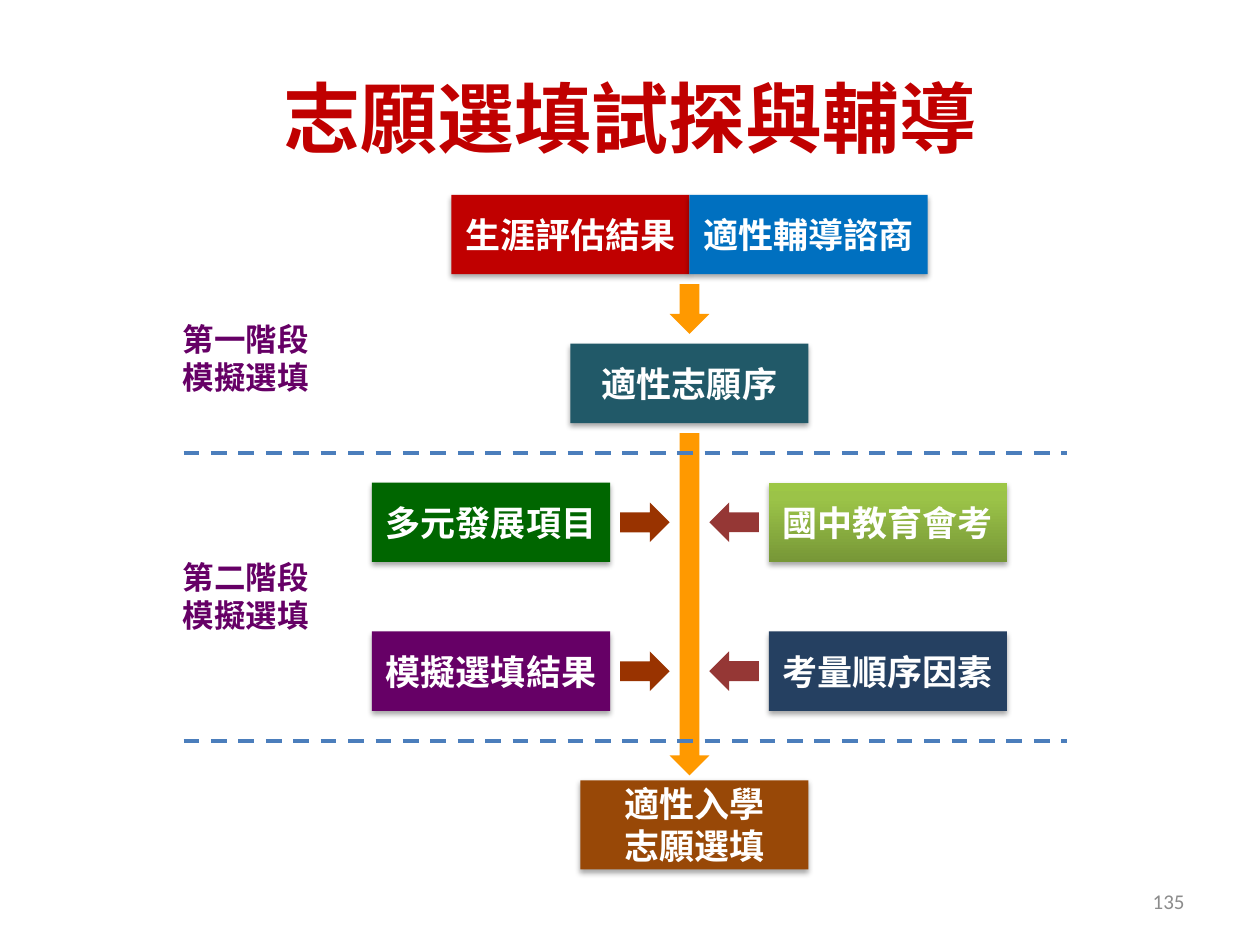
from copy import deepcopy

from lxml.etree import SubElement
from pptx import Presentation
from pptx.dml.color import RGBColor
from pptx.enum.dml import MSO_LINE
from pptx.enum.shapes import MSO_CONNECTOR, MSO_SHAPE
from pptx.enum.text import MSO_ANCHOR, PP_ALIGN
from pptx.oxml.ns import qn
from pptx.util import Cm, Pt

COLORS = {
    "red": "C00000", "blue": "0070C0", "teal": "215968", "green": "006600",
    "purple": "660066", "navy": "254061", "brown": "984807", "orange": "FF9900",
    "rust": "993300", "maroon": "953735", "dash": "4B7EBC", "gray": "8C8C8C",
    "white": "FFFFFF",
}
LIME_STOPS = [(0, "779737"), (0.8, "9BC348"), (1, "9DC746")]
CJK = "Noto Sans CJK SC"
BOX_W, BOX_H = 4.8, 1.6
ARROW_W, ARROW_H = 0.8, 1.0
AXIS = 13.9  # centre of the vertical flow


def rgb(name):
    return RGBColor.from_string(COLORS[name])


def write_text(tf, text, size=20, color="white", font=CJK, bold=True,
               align=PP_ALIGN.CENTER, anchor=MSO_ANCHOR.MIDDLE, wrap=True):
    tf.word_wrap = wrap
    tf.vertical_anchor = anchor
    for i, line in enumerate(text.split("\n")):
        p = tf.add_paragraph() if i else tf.paragraphs[0]
        p.alignment = align
        r = p.add_run()
        r.text = line
        r.font.size, r.font.bold, r.font.name = Pt(size), bold, font
        r.font.color.rgb = rgb(color)
        SubElement(r.font._element, qn("a:ea"), typeface=font)


class FlowSlide:
    def __init__(self, prs):
        self.s = prs.slides.add_slide(prs.slide_layouts[6])

    def text(self, x, y, w, h, text, **fmt):
        sp = self.s.shapes.add_textbox(Cm(x), Cm(y), Cm(w), Cm(h))
        write_text(sp.text_frame, text, **fmt)

    def shape(self, kind, x, y, w, h):
        sp = self.s.shapes.add_shape(kind, Cm(x), Cm(y), Cm(w), Cm(h))
        sp.shadow.inherit = False
        sp.line.fill.background()
        return sp

    def box(self, x, y, text, color, w=BOX_W, h=BOX_H):
        sp = self.shape(MSO_SHAPE.RECTANGLE, x, y, w, h)
        if color == "lime":
            self.gradient(sp, LIME_STOPS)
        else:
            sp.fill.solid()
            sp.fill.fore_color.rgb = rgb(color)
        self.drop_shadow(sp)
        sp.text_frame.margin_left = sp.text_frame.margin_right = Cm(0.1)
        write_text(sp.text_frame, text)

    def gradient(self, sp, stops):
        sp.fill.gradient()
        sp.fill.gradient_angle = 90
        gs_list = sp._element.spPr.find(".//" + qn("a:gsLst"))
        gs_list.append(deepcopy(gs_list[-1]))
        for stop, (position, color) in zip(sp.fill.gradient_stops, stops):
            stop.position = position
            stop.color.rgb = RGBColor.from_string(color)

    def drop_shadow(self, sp):
        effects = sp._element.spPr.find(qn("a:effectLst"))
        shadow = SubElement(effects, qn("a:outerShdw"), blurRad="40000",
                            dist="23000", dir="5400000", rotWithShape="0")
        black = SubElement(shadow, qn("a:srgbClr"), val="000000")
        SubElement(black, qn("a:alpha"), val="35000")

    def arrow(self, center, y, color, h=ARROW_H, rotation=0):
        sp = self.shape(MSO_SHAPE.DOWN_ARROW, center - ARROW_W / 2, y, ARROW_W, h)
        sp.fill.solid()
        sp.fill.fore_color.rgb = rgb(color)
        sp.rotation = rotation

    def divider(self, y, x1=3.7, x2=21.5):
        line = self.s.shapes.add_connector(
            MSO_CONNECTOR.STRAIGHT, Cm(x1), Cm(y), Cm(x2), Cm(y))
        line.line.color.rgb = rgb("dash")
        line.line.width = Pt(2.25)
        line.line.dash_style = MSO_LINE.DASH
        SubElement(line._element.spPr, qn("a:effectLst"))


def main():
    prs = Presentation()
    prs.slide_width, prs.slide_height = Cm(25.4), Cm(19.05)
    slide = FlowSlide(prs)

    # Title and page number
    slide.text(1.27, 0.76, 22.86, 3.18, "志願選填試探與輔導",
               size=44, color="red", font="Calibri")
    slide.text(18.2, 17.66, 5.93, 1.01, "135", size=12, color="gray",
               font="Calibri", bold=False, align=PP_ALIGN.RIGHT)

    # Inputs, first result and final choice
    slide.box(AXIS - BOX_W, 3.93, "生涯評估結果", "red")
    slide.box(AXIS, 3.93, "適性輔導諮商", "blue")
    slide.box(AXIS - BOX_W / 2, 6.93, "適性志願序", "teal")
    slide.box(11.7, 15.73, "適性入學\n志願選填", "brown", w=4.6, h=1.8)

    # Main flow
    slide.arrow(AXIS, 5.73, "orange")
    slide.arrow(AXIS, 8.73, "orange", h=6.9)

    # Second-stage factors, pointing at the main flow from both sides
    factors = [(9.73, ("多元發展項目", "green"), ("國中教育會考", "lime")),
               (12.73, ("模擬選填結果", "purple"), ("考量順序因素", "navy"))]
    for y, left, right in factors:
        slide.box(AXIS - 1.6 - BOX_W, y, *left)
        slide.box(AXIS + 1.6, y, *right)
        arrow_y = y + (BOX_H - ARROW_H) / 2
        slide.arrow(AXIS - 0.9, arrow_y, "rust", rotation=270)
        slide.arrow(AXIS + 0.9, arrow_y, "maroon", rotation=90)

    # Stage dividers and labels
    for y in (9.13, 14.93):
        slide.divider(y)
    for y, stage in ((6.33, "第一階段"), (11.13, "第二階段")):
        slide.text(3.42, y, 3.07, 1.8, stage + "\n模擬選填", size=18,
                   color="purple", anchor=MSO_ANCHOR.TOP, wrap=False)

    prs.save("out.pptx")


if __name__ == "__main__":
    main()
